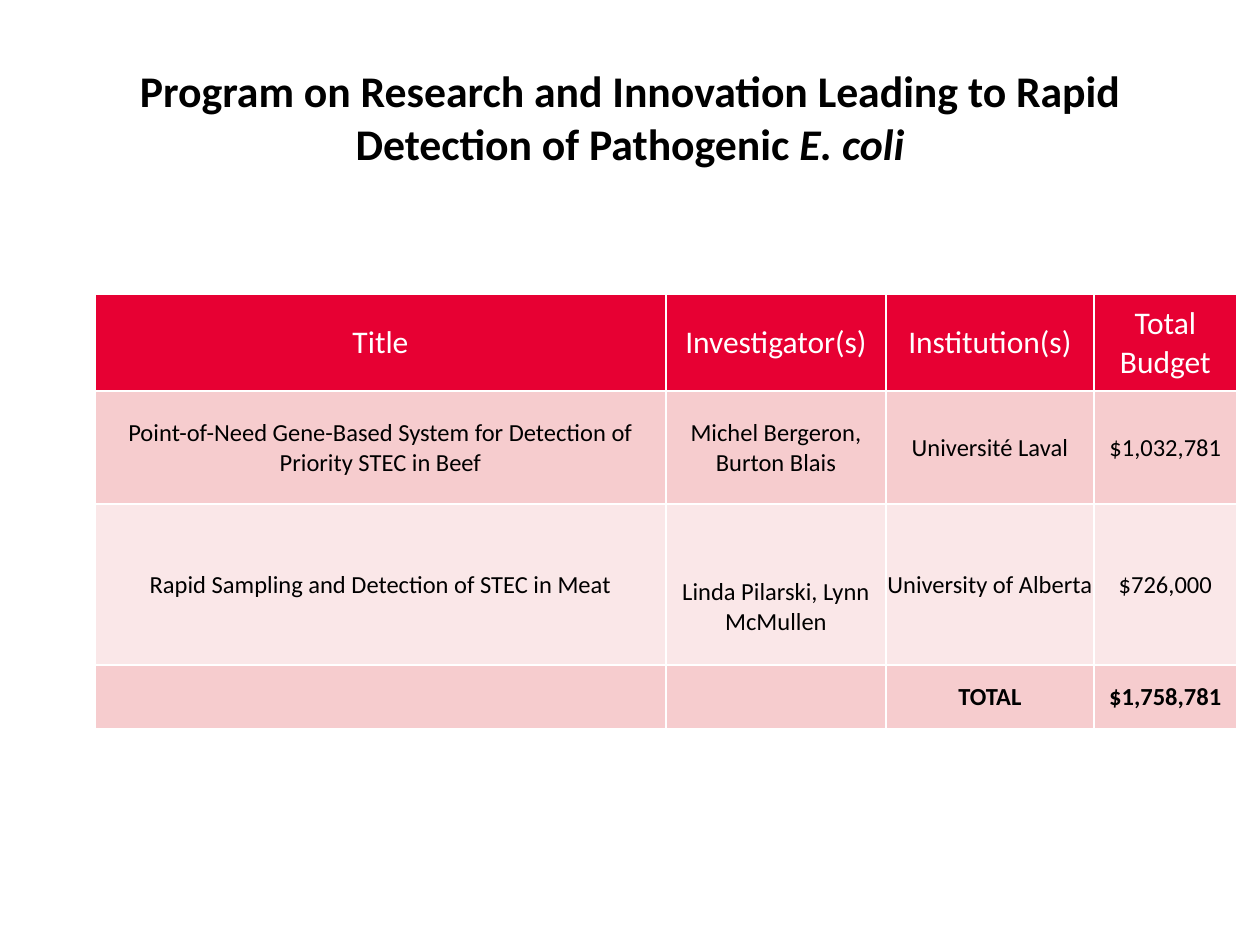
from dataclasses import dataclass

from lxml.etree import SubElement
from pptx import Presentation
from pptx.dml.color import RGBColor
from pptx.enum.text import MSO_ANCHOR as Anchor, PP_ALIGN as Align
from pptx.oxml.ns import qn
from pptx.util import Pt

PX = 914400 // 126

TITLE = [
    ("Program on Research and Innovation Leading to Rapid Detection of Pathogenic ", False),
    ("E. coli", True),
]
HEADER = ["Title", "Investigator(s)", "Institution(s)", "Total Budget"]
PROJECTS = [
    ["Point-of-Need Gene-Based System for Detection of Priority STEC in Beef",
     "Michel Bergeron, Burton Blais", "Université Laval", "$1,032,781"],
    ["Rapid Sampling and Detection of STEC in Meat",
     "Linda Pilarski, Lynn McMullen", "University of Alberta", "$726,000"],
]
TOTAL = ["", "", "TOTAL", "$1,758,781"]
ROWS = [HEADER, *PROJECTS, TOTAL]

TITLE_BOX = (63, 38, 1134, 157)
TABLE_AT = (95, 294)
COLUMN_WIDTHS = [571, 220, 208, 143]
ROW_HEIGHTS = [97, 113, 161, 64]
LOW_CELL = (2, 1)  # names that sit near the bottom of their cell
LOW_GAP = 28


@dataclass(frozen=True)
class Theme:
    font: str = "Calibri"
    ink: str = "000000"
    white: str = "FFFFFF"
    header: str = "E70033"
    bands: tuple = ("FAE7E8", "F6CCCE")
    title_size: int = 25
    header_size: int = 18
    body_size: int = 14
    border: int = 1


THEME = Theme()


def add_run(paragraph, text, size, color, bold=False, italic=False):
    run = paragraph.add_run()
    run.text = text
    font = run.font
    font.name, font.size = THEME.font, Pt(size)
    font.bold, font.italic = bold, italic
    font.color.rgb = RGBColor.from_string(color)


def add_borders(cell):
    properties = cell._tc.get_or_add_tcPr()
    for side in ("lnL", "lnR", "lnT", "lnB"):
        line = SubElement(properties, qn(f"a:{side}"), w=str(Pt(THEME.border)))
        fill = SubElement(line, qn("a:solidFill"))
        SubElement(fill, qn("a:srgbClr"), val=THEME.white)


def add_title(slide):
    title = slide.shapes.title
    title.left, title.top, title.width, title.height = (v * PX for v in TITLE_BOX)
    title.text_frame.vertical_anchor = Anchor.MIDDLE
    paragraph = title.text_frame.paragraphs[0]
    paragraph.alignment = Align.CENTER
    for text, italic in TITLE:
        add_run(paragraph, text, THEME.title_size, THEME.ink, True, italic)


def fill_cell(cell, text, row, column):
    is_header, is_total = row == 0, row == len(ROWS) - 1
    is_low = (row, column) == LOW_CELL
    add_borders(cell)
    cell.fill.solid()
    cell.fill.fore_color.rgb = RGBColor.from_string(
        THEME.header if is_header else THEME.bands[row % 2])
    cell.margin_left = cell.margin_right = cell.margin_top = PX
    cell.margin_bottom = LOW_GAP * PX if is_low else 0
    cell.vertical_anchor = Anchor.BOTTOM if is_low else Anchor.MIDDLE
    if text:
        paragraph = cell.text_frame.paragraphs[0]
        paragraph.alignment = Align.CENTER
        add_run(paragraph, text,
                THEME.header_size if is_header else THEME.body_size,
                THEME.white if is_header else THEME.ink, is_total)


def add_budget_table(slide):
    left, top = TABLE_AT
    table = slide.shapes.add_table(
        len(ROWS), len(HEADER), left * PX, top * PX,
        sum(COLUMN_WIDTHS) * PX, sum(ROW_HEIGHTS) * PX).table
    for column, width in zip(table.columns, COLUMN_WIDTHS):
        column.width = width * PX
    for row, height in zip(table.rows, ROW_HEIGHTS):
        row.height = height * PX
    for r, texts in enumerate(ROWS):
        for c, text in enumerate(texts):
            fill_cell(table.cell(r, c), text, r, c)


def main():
    deck = Presentation()
    deck.slide_width, deck.slide_height = 1260 * PX, 945 * PX
    slide = deck.slides.add_slide(deck.slide_layouts.get_by_name("Title Only"))
    add_title(slide)
    add_budget_table(slide)
    deck.save("out.pptx")


if __name__ == "__main__":
    main()
